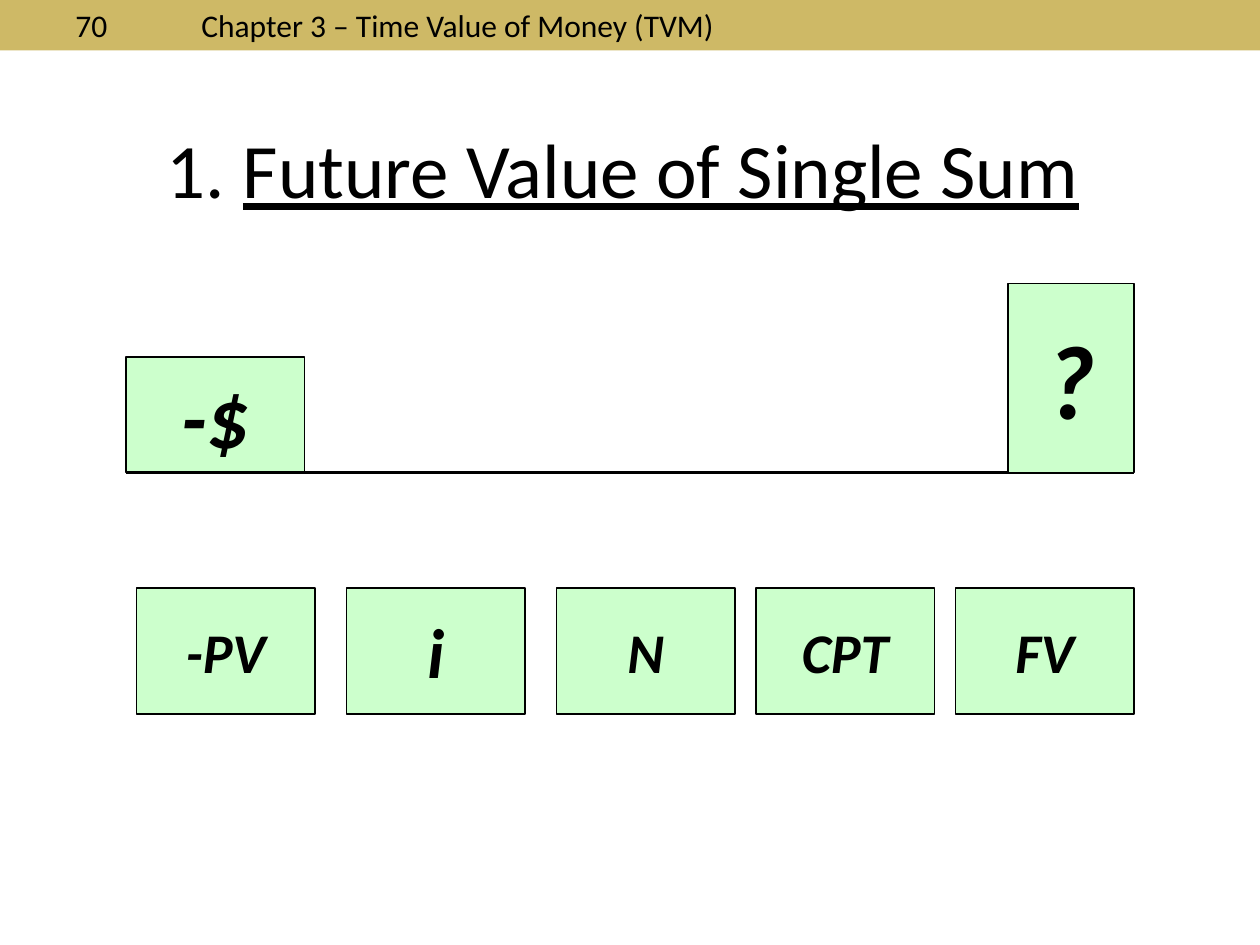
from lxml.etree import SubElement
from pptx import Presentation
from pptx.dml.color import RGBColor
from pptx.enum.shapes import MSO_CONNECTOR, MSO_SHAPE
from pptx.enum.text import MSO_ANCHOR, MSO_AUTO_SIZE, PP_ALIGN
from pptx.oxml.ns import qn
from pptx.util import Inches, Pt

FONT = "Calibri"
BLACK = RGBColor(0x00, 0x00, 0x00)
GOLD = RGBColor(0xCE, 0xB9, 0x66)
MINT = RGBColor(0xCC, 0xFF, 0xCC)

BOX_WIDTH = 17
BASELINE_ROW = 45
KEY_ROW = 56
# label, left column, text size
KEYS = [("-PV", 13, 32), ("i", 33, 40), ("N", 53, 32), ("CPT", 72, 32), ("FV", 91, 32)]


def grid(cells):
    """Length of grid cells; the slide has 120 columns and 90 rows."""
    return Inches(cells / 12)


def style_font(font, size, bold=None, italic=None):
    font.name = FONT
    font.size = Pt(size)
    font.bold = bold
    font.italic = italic
    font.color.rgb = BLACK


def add_header(slide, text):
    height = Inches(0.4)
    band = slide.shapes.add_shape(MSO_SHAPE.RECTANGLE, 0, 0, grid(120), height)
    band.shadow.inherit = False
    band.fill.solid()
    band.fill.fore_color.rgb = GOLD
    band.line.fill.background()

    label = slide.shapes.add_textbox(0, 0, grid(77), height)
    label.text_frame.word_wrap = True
    label.text_frame.text = text
    paragraph = label.text_frame.paragraphs[0]
    style_font(paragraph.font, 18)
    properties = paragraph._p.get_or_add_pPr()
    properties.set("marL", str(Inches(0.5)))
    properties.set("indent", "0")
    properties.set("defTabSz", str(Inches(1)))


def set_title(slide, number, heading):
    title = slide.shapes.title
    title.left, title.top = Inches(1.11), grid(11)
    title.width, title.height = Inches(7.67), Inches(0.84)
    frame = title.text_frame
    frame.word_wrap = False
    frame.auto_size = MSO_AUTO_SIZE.NONE
    frame.vertical_anchor = MSO_ANCHOR.TOP
    paragraph = frame.paragraphs[0]
    paragraph.alignment = PP_ALIGN.CENTER
    style_font(paragraph.font, 44)
    paragraph.add_run().text = number
    underlined = paragraph.add_run()
    underlined.text = heading
    underlined.font.underline = True


def add_box(slide, label, column, row, columns, rows, size, preset=MSO_SHAPE.RECTANGLE):
    box = slide.shapes.add_shape(preset, grid(column), grid(row), grid(columns), grid(rows))
    box.shadow.inherit = False
    box.fill.solid()
    box.fill.fore_color.rgb = MINT
    box.line.color.rgb = BLACK
    box.line.width = Pt(0.75)
    frame = box.text_frame
    frame.word_wrap = False
    frame.vertical_anchor = MSO_ANCHOR.MIDDLE
    frame.text = label
    paragraph = frame.paragraphs[0]
    paragraph.alignment = PP_ALIGN.CENTER
    style_font(paragraph.font, size, bold=True, italic=True)


def add_timeline(slide, start, end, row):
    timeline = slide.shapes.add_connector(
        MSO_CONNECTOR.STRAIGHT, grid(start), grid(row), grid(end), grid(row))
    timeline.line.color.rgb = BLACK
    timeline.line.width = Pt(2.25)
    SubElement(timeline._element.spPr, qn("a:effectLst"))


def main():
    deck = Presentation()
    deck.slide_width, deck.slide_height = grid(120), grid(90)
    slide = deck.slides.add_slide(deck.slide_layouts[5])

    add_header(slide, "70\tChapter 3 – Time Value of Money (TVM)")
    set_title(slide, "1. ", "Future Value of Single Sum")

    process = MSO_SHAPE.FLOWCHART_PROCESS
    add_box(slide, "-$", 12, BASELINE_ROW - 11, BOX_WIDTH, 11, 48, process)
    add_timeline(slide, 12, 108, BASELINE_ROW)
    add_box(slide, "?", 96, BASELINE_ROW - 18, 12, 18, 60, process)

    for label, column, size in KEYS:
        add_box(slide, label, column, KEY_ROW, BOX_WIDTH, 12, size)

    deck.save("out.pptx")


if __name__ == "__main__":
    main()
